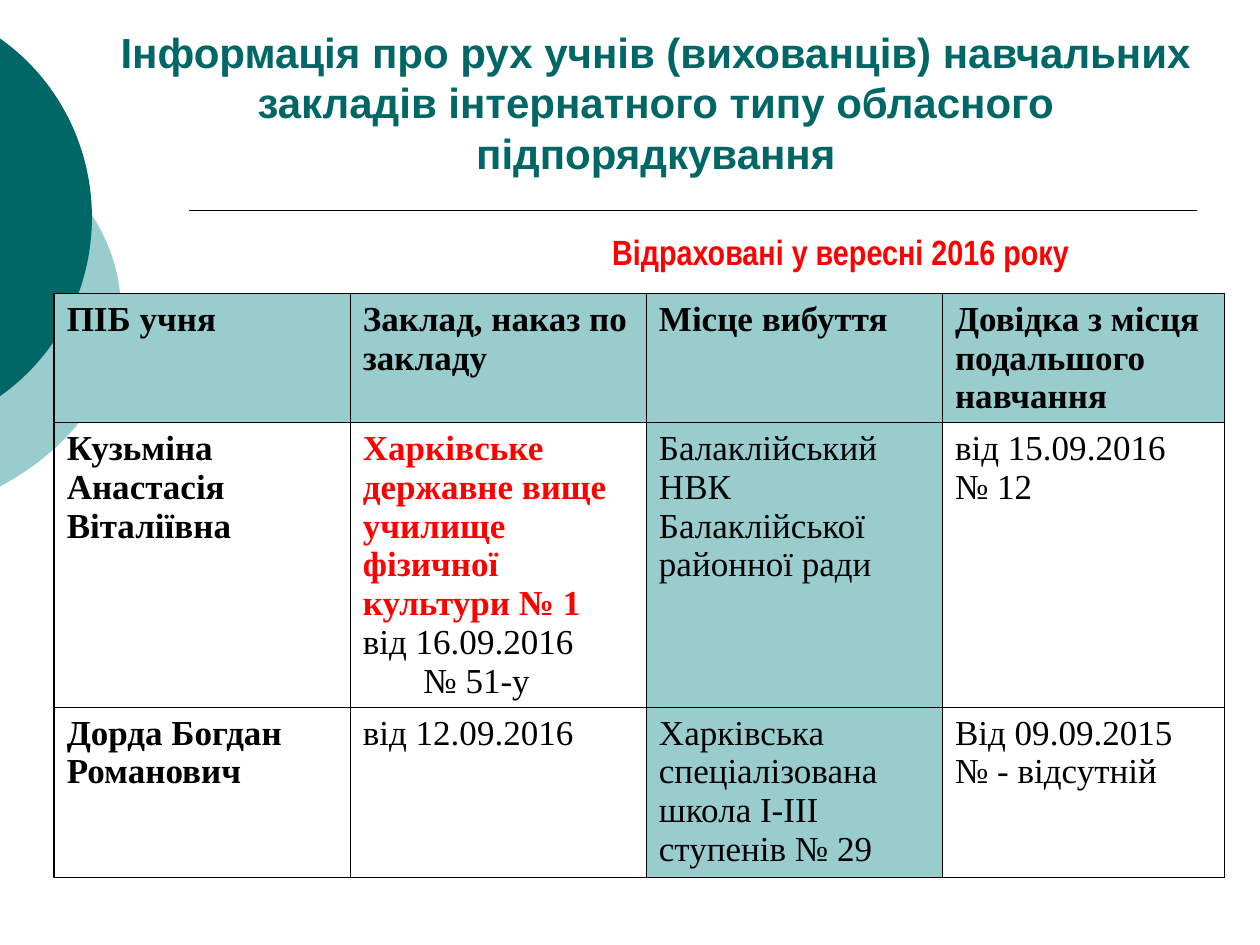
from math import atan2, degrees, sqrt

from lxml import etree
from pptx import Presentation
from pptx.dml.color import RGBColor
from pptx.enum.shapes import MSO_CONNECTOR, MSO_SHAPE
from pptx.enum.text import MSO_ANCHOR, MSO_AUTO_SIZE, PP_ALIGN
from pptx.oxml.ns import qn
from pptx.util import Inches, Pt

CENTER = PP_ALIGN.CENTER
BOTTOM = MSO_ANCHOR.BOTTOM
FIXED = MSO_AUTO_SIZE.NONE
CHORD = MSO_SHAPE.CHORD
STRAIGHT = MSO_CONNECTOR.STRAIGHT
TEAL, PALE, RED, BLACK = "006666", "99CCCC", "FF0000", "000000"
TITLE = ("Інформація про рух учнів (вихованців) навчальних закладів "
         "інтернатного типу обласного підпорядкування")
NOTE = "Відраховані у вересні 2016 року"
PLAIN = {"name": "Times New Roman", "size": Pt(20), "bold": False}
BOLD = {**PLAIN, "bold": True}
COLS = [2.35, 2.35, 2.35, 2.24]
ROWS = [1.02, 2.26, 1.35]
HEAD = ["ПІБ учня", "Заклад, наказ по закладу", "Місце вибуття",
        "Довідка з місця подальшого навчання"]
SCHOOL = "Харківське державне вище училище фізичної культури № 1"
BODY = [
    ["Кузьміна Анастасія Віталіївна",
     [(SCHOOL, BOLD, RED, 0), ("від 16.09.2016", PLAIN, BLACK, 0),
      ("№ 51-у", PLAIN, BLACK, 0.48)],
     "Балаклійський НВК Балаклійської районної ради",
     "від 15.09.2016\v№ 12"],
    ["Дорда Богдан Романович", "від 12.09.2016",
     "Харківська спеціалізована школа І-ІІІ ступенів № 29",
     "Від 09.09.2015\v№ - відсутній"],
]


def paint(hue):
    """Turn a hex string into a colour."""
    return RGBColor.from_string(hue)


def style(para, looks, hue):
    """Give a paragraph its font values and colour."""
    for run in para.runs:
        for key, val in looks.items():
            setattr(run.font, key, val)
        run.font.color.rgb = paint(hue)


def add_disc(slide, box, hue):
    """Draw an oval cut off along the left edge of the slide."""
    left, _, width, height = box
    reach = -left - width / 2
    rise = height / 2 * sqrt(1 - (2 * reach / width) ** 2)
    turn = degrees(atan2(rise, reach))
    disc = slide.shapes.add_shape(CHORD, *map(Inches, box))
    for i, angle in enumerate((360 - turn, turn)):
        disc.adjustments[i] = angle * 0.6
    disc.shadow.inherit = False
    disc.fill.solid()
    disc.fill.fore_color.rgb = paint(hue)
    disc.line.fill.background()


def add_rule(slide, left, top, width):
    """Draw the thin line below the title."""
    rule = slide.shapes.add_connector(
        STRAIGHT, *map(Inches, (left, top, left + width, top)))
    rule.line.color.rgb = paint(BLACK)
    rule.line.width = Pt(1)
    etree.SubElement(rule._element.spPr, qn("a:effectLst"))


def add_title(slide, box):
    """Fill and place the title placeholder."""
    title = slide.shapes.title
    title.left, title.top, title.width, title.height = map(Inches, box)
    frame = title.text_frame
    frame.text = TITLE
    frame.auto_size = FIXED
    frame.vertical_anchor = BOTTOM
    para = frame.paragraphs[0]
    para.alignment = CENTER
    style(para, {"name": "Arial", "size": Pt(24), "bold": True}, TEAL)


def add_note(slide, box):
    """Write the red line above the table."""
    frame = slide.shapes.add_textbox(*map(Inches, box)).text_frame
    frame.word_wrap = True
    frame.text = NOTE
    looks = {"name": "Arial Narrow", "size": Pt(20), "bold": True}
    style(frame.paragraphs[0], looks, RED)


def add_edges(cell):
    """Put a thin black border round a cell, ahead of its fill."""
    props = cell._tc.get_or_add_tcPr()
    for spot, side in enumerate(("lnL", "lnR", "lnT", "lnB")):
        edge = etree.Element(qn(f"a:{side}"), w=str(Pt(1)))
        fill = etree.SubElement(edge, qn("a:solidFill"))
        etree.SubElement(fill, qn("a:srgbClr"), val=BLACK)
        props.insert(spot, edge)


def fill_cell(cell, parts, shaded):
    """Write the paragraphs of a cell and set its fill."""
    frame = cell.text_frame
    for i, (text, looks, hue, inset) in enumerate(parts):
        para = frame.add_paragraph() if i else frame.paragraphs[0]
        para.text = text
        style(para, looks, hue)
        if inset:
            para._p.get_or_add_pPr().set("marL", str(Inches(inset)))
    if shaded:
        cell.fill.solid()
        cell.fill.fore_color.rgb = paint(PALE)
    else:
        cell.fill.background()
    add_edges(cell)


def add_grid(slide, left, top):
    """Build the table of pupils."""
    box = map(Inches, (left, top, sum(COLS), sum(ROWS)))
    grid = slide.shapes.add_table(len(ROWS), len(COLS), *box).table
    grid.first_row = grid.horz_banding = False
    for col, width in zip(grid.columns, COLS):
        col.width = Inches(width)
    for row, height in zip(grid.rows, ROWS):
        row.height = Inches(height)
    for r, line in enumerate([HEAD, *BODY]):
        for c, item in enumerate(line):
            looks = BOLD if r == 0 or c == 0 else PLAIN
            parts = [(item, looks, BLACK, 0)] if isinstance(item, str) else item
            fill_cell(grid.cell(r, c), parts, r == 0 or c == 2)


def main():
    """Make the slide and save it."""
    deck = Presentation()
    deck.slide_width, deck.slide_height = Inches(10), Inches(7.5)
    slide = deck.slides.add_slide(deck.slide_layouts[5])
    add_disc(slide, (-3.54, 0.75, 4.5, 3.42), PALE)
    add_disc(slide, (-2.65, 0, 3.38, 3.45), TEAL)
    add_rule(slide, 1.5, 1.67, 8)
    add_title(slide, (0.75, 0.21, 8.91, 1.25))
    add_grid(slide, 0.43, 2.33)
    add_note(slide, (4.76, 1.78, 4.73, 0.43))
    deck.save("out.pptx")


if __name__ == "__main__":
    main()
